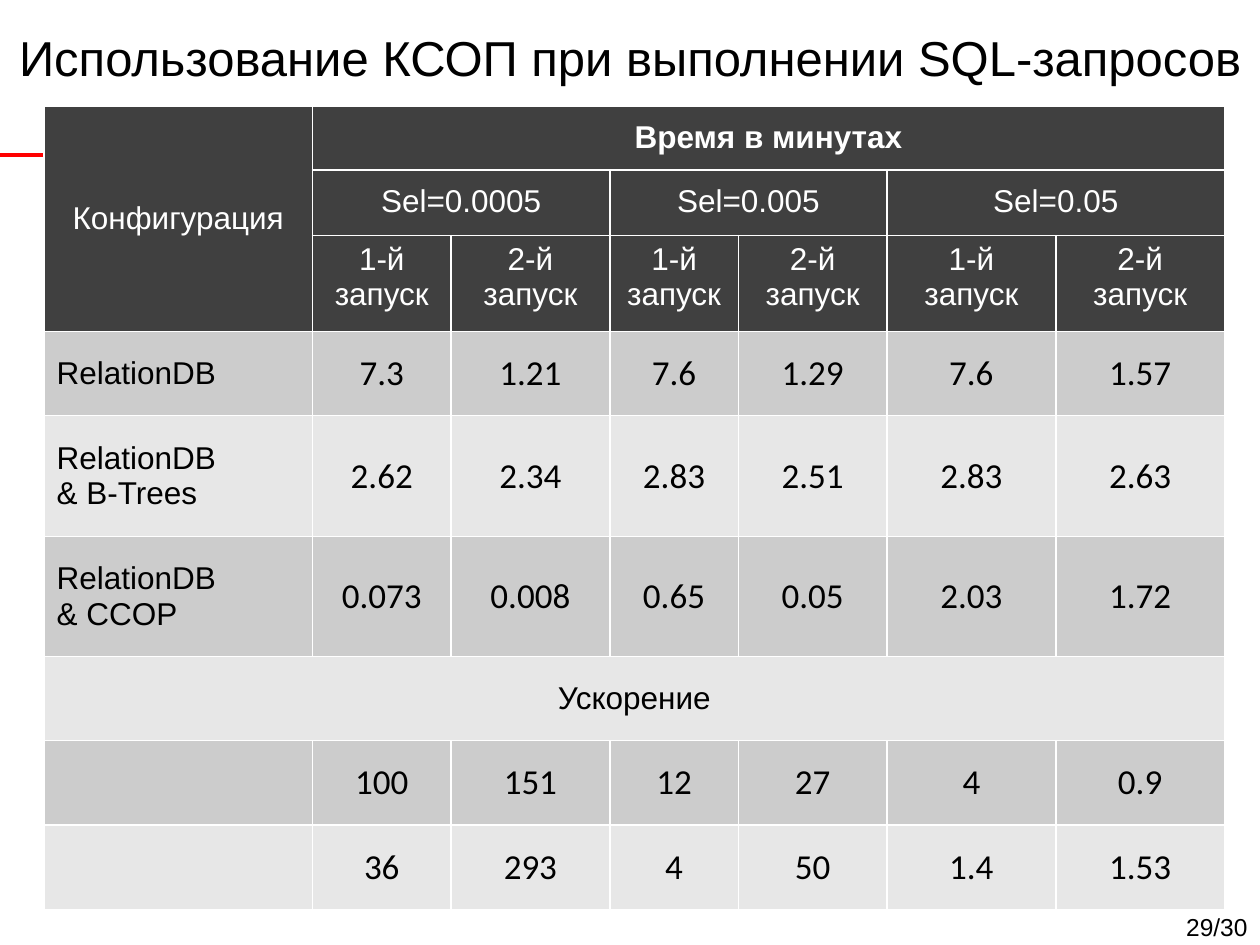
import pptx
import pptx.util
import pptx.dml.color
import pptx.enum.shapes
import pptx.enum.text
import pptx.oxml
import pptx.oxml.ns

ALIGN = pptx.enum.text.PP_ALIGN
ANCHOR = pptx.enum.text.MSO_ANCHOR
HUES = {"ink": "000000", "paper": "FFFFFF", "head": "404040",
        "odd": "CCCCCC", "even": "E7E7E7", "rule": "FF0000"}

# Table contents
SPEEDS = ["Sel=0.0005", "Sel=0.005", "Sel=0.05"]
RUNS = ["1-й запуск", "2-й запуск"]
BODY = [
    ["RelationDB", "7.3", "1.21", "7.6", "1.29", "7.6", "1.57"],
    ["RelationDB \v& B-Trees", "2.62", "2.34", "2.83", "2.51", "2.83", "2.63"],
    ["RelationDB \v& CCOP", "0.073", "0.008", "0.65", "0.05", "2.03", "1.72"],
    ["Ускорение"] + [""] * 6,
    ["", "100", "151", "12", "27", "4", "0.9"],
    ["", "36", "293", "4", "50", "1.4", "1.53"],
]
# Column and row sizes in grid units
COLS = [21.3, 11, 12.6, 10.2, 11.8, 13.4, 13.4]
ROWS = [5.1, 5.2, 7.6, 6.7, 9.6, 9.5, 6.7, 6.7, 6.7]


def unit(n):
    """Length of n grid units; the slide is 100 units wide and 75 high."""
    return pptx.util.Inches(n / 10)


def color(name):
    return pptx.dml.color.RGBColor.from_string(HUES[name])


class Deck:
    def __init__(self):
        self.prs = pptx.Presentation()
        self.prs.slide_width, self.prs.slide_height = unit(100), unit(75)
        self.slide = self.prs.slides.add_slide(self.prs.slide_layouts[5])
        self.font = "Arial"

    def words(self, frame, text, size, align, hue="ink", font=None, bold=False):
        frame.text = text
        for para in frame.paragraphs:
            para.alignment = align
            for run in para.runs:
                run.font.name = font or self.font
                run.font.size = pptx.util.Pt(size)
                run.font.bold = bold
                run.font.color.rgb = color(hue)

    def title(self, text, *box):
        shape = self.slide.shapes.title
        shape.left, shape.top, shape.width, shape.height = map(unit, box)
        frame = shape.text_frame
        frame.auto_size = pptx.enum.text.MSO_AUTO_SIZE.NONE
        frame.vertical_anchor = ANCHOR.MIDDLE
        self.words(frame, text, 28, ALIGN.CENTER)

    def label(self, text, size, align, *box):
        frame = self.slide.shapes.add_textbox(*map(unit, box)).text_frame
        frame.word_wrap = True
        self.words(frame, text, size, align)

    def rule(self, *ends):
        kind = pptx.enum.shapes.MSO_CONNECTOR.STRAIGHT
        line = self.slide.shapes.add_connector(kind, *map(unit, ends))
        line.line.color.rgb = color("rule")
        line.line.width = pptx.util.Pt(2.25)
        props = line._element.spPr
        props.append(pptx.oxml.parse_xml(
            f'<a:effectLst {pptx.oxml.ns.nsdecls("a")}/>'))

    def table(self, left, top, cols, rows):
        box = map(unit, (left, top, sum(cols), sum(rows)))
        grid = self.slide.shapes.add_table(len(rows), len(cols), *box).table
        grid.first_row = grid.horz_banding = False
        for col, size in zip(grid.columns, cols):
            col.width = unit(size)
        for row, size in zip(grid.rows, rows):
            row.height = unit(size)
        return grid

    def paint(self, cell, hue):
        cell.fill.solid()
        cell.fill.fore_color.rgb = color(hue)
        props = cell._tc.get_or_add_tcPr()
        for spot, side in enumerate("LRTB"):
            props.insert(spot, pptx.oxml.parse_xml(
                f'<a:ln{side} {pptx.oxml.ns.nsdecls("a")} w="12700"><a:solidFill>'
                f'<a:srgbClr val="{HUES["paper"]}"/></a:solidFill></a:ln{side}>'))

    def cell(self, cell, text, padx, pady, anchor=ANCHOR.MIDDLE,
             size=18, align=ALIGN.CENTER, **style):
        cell.margin_left = cell.margin_right = unit(padx)
        cell.margin_top = cell.margin_bottom = unit(pady)
        cell.vertical_anchor = anchor
        self.words(cell.text_frame, text, size, align, **style)


def main():
    deck = Deck()
    deck.rule(0, 12.3, 94.9, 12.3)
    deck.title("Использование КСОП при выполнении SQL‑запросов", 0, 0.8, 100, 7.5)

    # Fills, borders and merged cells
    grid = deck.table(3.5, 8.4, COLS, ROWS)
    for r in range(len(ROWS)):
        hue = "head" if r < 3 else "odd" if r % 2 else "even"
        for c in range(len(COLS)):
            deck.paint(grid.cell(r, c), hue)
    pairs = [(1, c, 1, c + 1) for c in (1, 3, 5)]
    for r, c, low, last in [(0, 0, 2, 0), (0, 1, 0, 6), (6, 0, 6, 6)] + pairs:
        grid.cell(r, c).merge(grid.cell(low, last))

    # Header
    deck.cell(grid.cell(0, 0), "Конфигурация", 1, 0.5, hue="paper")
    deck.cell(grid.cell(0, 1), "Время в минутах", 1, 1.1, ANCHOR.TOP,
              hue="paper", bold=True)
    for i, text in enumerate(SPEEDS):
        c = 1 + 2 * i
        deck.cell(grid.cell(1, c), text, 1, 1.1, ANCHOR.TOP, hue="paper")
        for j, run in enumerate(RUNS):
            deck.cell(grid.cell(2, c + j), run, 1, 0.5, ANCHOR.TOP, hue="paper")

    # Measurements
    for r, (name, *values) in enumerate(BODY, 3):
        wide = grid.cell(r, 0).is_merge_origin
        if name:
            deck.cell(grid.cell(r, 0), name, 1, 1.9,
                      align=ALIGN.CENTER if wide else ALIGN.LEFT)
        for c, value in enumerate(values, 1):
            if value:
                deck.cell(grid.cell(r, c), value, 0.2, 0.2, size=20,
                          font="Calibri")

    # Page number
    deck.label("29/30", 14, ALIGN.RIGHT, 92.5, 71.9, 7.5, 3.1)
    deck.prs.save("out.pptx")


if __name__ == "__main__":
    main()
